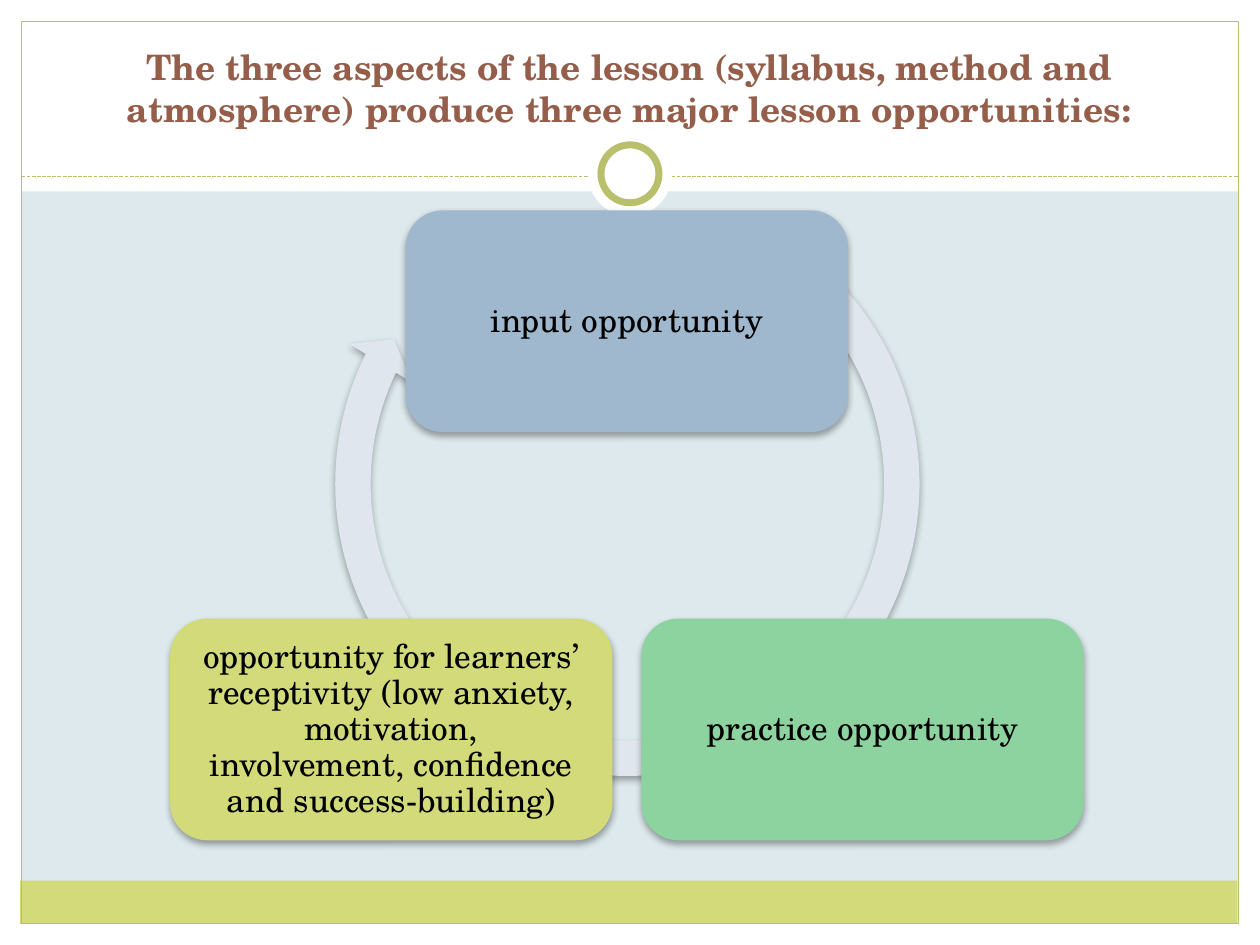
from lxml import etree
from pptx import Presentation
from pptx.dml.color import RGBColor
from pptx.enum.dml import MSO_LINE as Dash
from pptx.enum.shapes import MSO_CONNECTOR as Conn, MSO_SHAPE as Kind
from pptx.enum.text import MSO_ANCHOR as Anchor, PP_ALIGN as Align
from pptx.oxml.ns import qn
from pptx.util import Inches, Pt

THEME = {
    "font": "TeX Gyre Schola", "title_size": 20, "node_size": 19,
    "back": "DDE9EC", "white": "FFFFFF", "black": "000000", "title": "955E4B",
    "line": "B9C06C", "lime": "D2DA7A", "blue": "9FB8CD", "green": "8DD3A0",
    "ring": "DFE6ED",
}
WIDE, HIGH, EDGE, HEAD = 10, 7.5, 0.17, 1.52
TITLE = ("The three aspects of the lesson (syllabus, method and atmosphere) "
         "produce three major lesson opportunities:")
BANDS = [
    (0, HIGH - EDGE, WIDE, EDGE, "white"),
    (0, 0, WIDE, HEAD, "white"),
    (0, 0, EDGE, HIGH, "white"),
    (WIDE - EDGE, 0, EDGE, HIGH, "white"),
    (0.16, 6.99, 9.66, 0.34, "lime"),
]
NODE = (3.51, 1.76)
NODES = [
    ("input opportunity", 3.22, 1.67, "blue"),
    ("practice opportunity", 5.09, 4.91, "green"),
    ("opportunity for learners’ receptivity (low anxiety, motivation, "
     "involvement, confidence and success-building)", 1.35, 4.91, "lime"),
]
ARC = (2.51, 1.37, 4.94, 4.94)
BENDS = (0.05689, 3.4051, 123.631, 183.118, 0.05908)


def tint(name):
    return RGBColor.from_string(THEME[name])


def add_form(slide, kind, box, fill=None, line=None, width=0.75):
    form = slide.shapes.add_shape(kind, *map(Inches, box))
    form.shadow.inherit = False
    if fill:
        form.fill.solid()
        form.fill.fore_color.rgb = tint(fill)
    else:
        form.fill.background()
    if line:
        form.line.color.rgb = tint(line)
        form.line.width = Pt(width)
    else:
        form.line.fill.background()
    return form


def add_shade(form):
    fx = form.element.spPr.find(qn("a:effectLst"))
    shade = etree.SubElement(fx, qn("a:outerShdw"), blurRad=str(Pt(4)),
                             dist=str(Pt(2)), dir="5400000", rotWithShape="0")
    hue = etree.SubElement(shade, qn("a:srgbClr"), val=THEME["black"])
    etree.SubElement(hue, qn("a:alpha"), val="35000")


def put_text(form, text, size, color, anchor, bold=False, gap=1.0):
    frame = form.text_frame
    frame.word_wrap = True
    frame.vertical_anchor = anchor
    para = frame.paragraphs[0]
    para.text = text
    para.alignment = Align.CENTER
    para.line_spacing = gap
    font = para.font
    font.name, font.size, font.bold = THEME["font"], Pt(THEME[size]), bold
    font.color.rgb = tint(color)
    return frame


def add_frame(slide):
    for *box, fill in BANDS:
        add_form(slide, Kind.RECTANGLE, box, fill)
    add_form(slide, Kind.RECTANGLE,
             (EDGE, EDGE, WIDE - 2 * EDGE, HIGH - 2 * EDGE), line="line")
    rule = slide.shapes.add_connector(
        Conn.STRAIGHT, *map(Inches, (EDGE, 1.4, WIDE - EDGE, 1.4)))
    rule.line.color.rgb = tint("line")
    rule.line.width = Pt(0.75)
    rule.line.dash_style = Dash.SQUARE_DOT
    etree.SubElement(rule.element.spPr, qn("a:effectLst"))
    for size, line in ((0.67, None), (0.46, "line")):
        box = ((WIDE - size) / 2, 1.38 - size / 2, size, size)
        add_form(slide, Kind.OVAL, box, "white", line, 4)


def add_cycle(slide):
    arc = add_form(slide, Kind.CIRCULAR_ARROW, ARC, "ring")
    for i, bend in enumerate(BENDS):
        arc.adjustments[i] = bend
    add_shade(arc)
    for text, left, top, fill in NODES:
        node = add_form(slide, Kind.ROUNDED_RECTANGLE, (left, top, *NODE), fill)
        add_shade(node)
        frame = put_text(node, text, "node_size", "black", Anchor.MIDDLE, gap=0.9)
        frame.margin_left = frame.margin_right = Inches(0.17)
        frame.margin_top = frame.margin_bottom = Inches(0.17)


def main():
    """Build the slide on lesson opportunities."""
    deck = Presentation()
    deck.slide_width, deck.slide_height = Inches(WIDE), Inches(HIGH)
    slide = deck.slides.add_slide(deck.slide_layouts[6])
    slide.background.fill.solid()
    slide.background.fill.fore_color.rgb = tint("back")
    add_frame(slide)
    title = slide.shapes.add_textbox(*map(Inches, (0.33, 0.25, 9.33, 0.83)))
    put_text(title, TITLE, "title_size", "title", Anchor.BOTTOM, bold=True)
    add_cycle(slide)
    deck.save("out.pptx")


if __name__ == "__main__":
    main()
